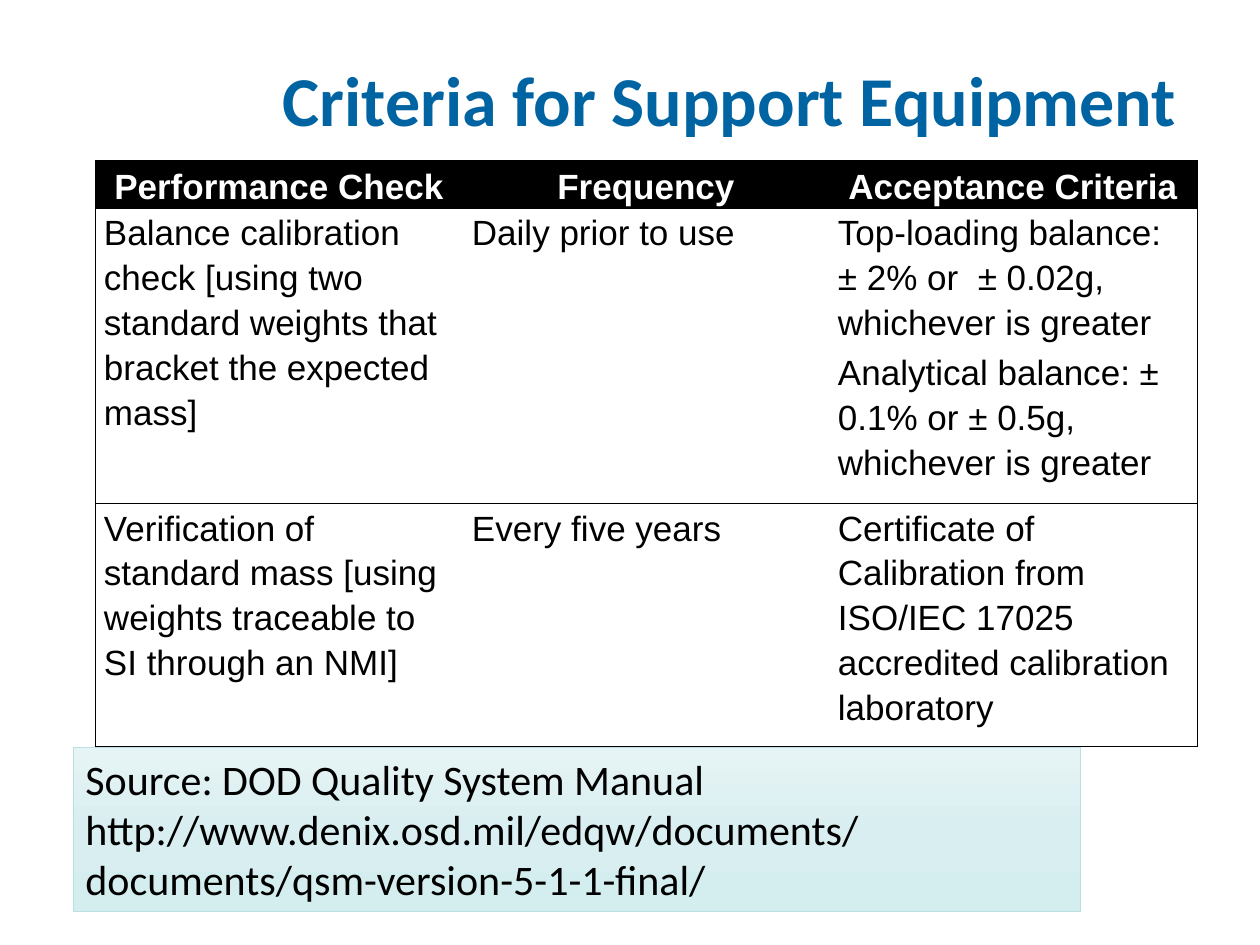
from copy import deepcopy

from lxml import etree
from pptx import Presentation
from pptx.dml.color import RGBColor
from pptx.enum.shapes import MSO_SHAPE
from pptx.enum.text import MSO_ANCHOR, PP_ALIGN
from pptx.oxml.ns import qn
from pptx.util import Pt

RECTANGLE = MSO_SHAPE.RECTANGLE
TOP, MIDDLE = MSO_ANCHOR.TOP, MSO_ANCHOR.MIDDLE
LEFT, CENTER = PP_ALIGN.LEFT, PP_ALIGN.CENTER

EMU_PER_PX = 914400 / 126
COLORS = {
    "title": "0064A2",
    "header": "000000",
    "header_text": "FFFFFF",
    "text": "000000",
    "border": "000000",
    "source_line": "BBE0E3",
}
SOURCE_GRADIENT = [(0, "E6F4F5"), (0.5, "D9EEF0"), (1, "D4EDEF")]

COLUMN_WIDTHS = [368, 366, 368]
ROW_HEIGHTS = [46, 274, 243]
ROWS = [
    [["Performance Check"], ["Frequency"], ["Acceptance Criteria"]],
    [
        ["Balance calibration check [using two standard weights that "
         "bracket the expected mass]"],
        ["Daily prior to use"],
        ["Top-loading balance: ± 2% or  ± 0.02g, whichever is greater",
         "Analytical balance: ± 0.1% or ± 0.5g, whichever is greater"],
    ],
    [
        ["Verification of standard mass [using weights traceable to SI "
         "through an NMI]"],
        ["Every five years"],
        ["Certificate of Calibration from ISO/IEC 17025 accredited "
         "calibration laboratory"],
    ],
]
SOURCE = [
    "Source: DOD Quality System Manual",
    "http://www.denix.osd.mil/edqw/documents/documents/qsm-version-5-1-1-final/",
]


def px(length):
    return round(length * EMU_PER_PX)


def place(box):
    return [px(length) for length in box]


def rgb(name):
    return RGBColor.from_string(COLORS[name])


def write(frame, lines, font, size, color, bold=False, align=LEFT):
    """Fill a text frame with one paragraph per line."""
    frame.word_wrap = True
    for index, line in enumerate(lines):
        para = frame.paragraphs[0] if index == 0 else frame.add_paragraph()
        para.text = line
        para.alignment = align
        para.font.name = font
        para.font.size = Pt(size)
        para.font.bold = bold
        para.font.color.rgb = rgb(color)


def add_title(page, box):
    frame = page.shapes.add_textbox(*place(box)).text_frame
    write(frame, ["Criteria for Support Equipment"], "Calibri", 40, "title", True, CENTER)
    frame.vertical_anchor = MIDDLE


def set_borders(cell, drawn_sides):
    """Draw the given sides of a cell and clear the others."""
    properties = cell._tc.get_or_add_tcPr()
    for side in "LRTB":
        line = etree.SubElement(properties, qn(f"a:ln{side}"), w=str(Pt(0.5)))
        if side in drawn_sides:
            fill = etree.SubElement(line, qn("a:solidFill"))
            etree.SubElement(fill, qn("a:srgbClr"), val=COLORS["border"])
        else:
            etree.SubElement(line, qn("a:noFill"))


def add_criteria_table(page, box):
    last = len(COLUMN_WIDTHS) - 1
    table = page.shapes.add_table(len(ROWS), last + 1, *place(box)).table
    for column, width in zip(table.columns, COLUMN_WIDTHS):
        column.width = px(width)
    for row, height in zip(table.rows, ROW_HEIGHTS):
        row.height = px(height)

    for row_index, row in enumerate(ROWS):
        is_header = row_index == 0
        for column_index, lines in enumerate(row):
            cell = table.cell(row_index, column_index)
            cell.margin_left = cell.margin_right = px(9)
            cell.margin_top = cell.margin_bottom = 0
            cell.vertical_anchor = MIDDLE if is_header else TOP
            sides = "TB" + "L" * (column_index == 0) + "R" * (column_index == last)
            set_borders(cell, sides)
            if is_header:
                cell.fill.solid()
                cell.fill.fore_color.rgb = rgb("header")
            else:
                cell.fill.background()
            write(cell.text_frame, lines, "Arial", 20,
                  "header_text" if is_header else "text",
                  is_header, CENTER if is_header else LEFT)
            for para in cell.text_frame.paragraphs:
                para.line_spacing = 1.15
            # Gap between the paragraphs of one cell
            for para in cell.text_frame.paragraphs[:-1]:
                para.space_after = Pt(3)


def add_source(page, box):
    panel = page.shapes.add_shape(RECTANGLE, *place(box))
    panel.shadow.inherit = False
    panel.line.color.rgb = rgb("source_line")
    panel.line.width = Pt(0.5)

    # Three-stop gradient from top to bottom
    panel.fill.gradient()
    panel.fill.gradient_angle = 270
    first_stop = panel.fill.gradient_stops[0]._gs
    first_stop.addnext(deepcopy(first_stop))
    for stop, (position, color) in zip(panel.fill.gradient_stops, SOURCE_GRADIENT):
        stop.position = position
        stop.color.rgb = RGBColor.from_string(color)

    write(panel.text_frame, SOURCE, "Calibri", 24, "text")
    panel.text_frame.vertical_anchor = TOP


def main():
    deck = Presentation()
    deck.slide_width, deck.slide_height = px(1260), px(945)
    page = deck.slides.add_slide(deck.slide_layouts[6])
    add_title(page, (199, 38, 1061, 120))
    add_criteria_table(page, (95, 160, sum(COLUMN_WIDTHS), sum(ROW_HEIGHTS)))
    add_source(page, (73, 747, 1008, 165))
    deck.save("out.pptx")


if __name__ == "__main__":
    main()
